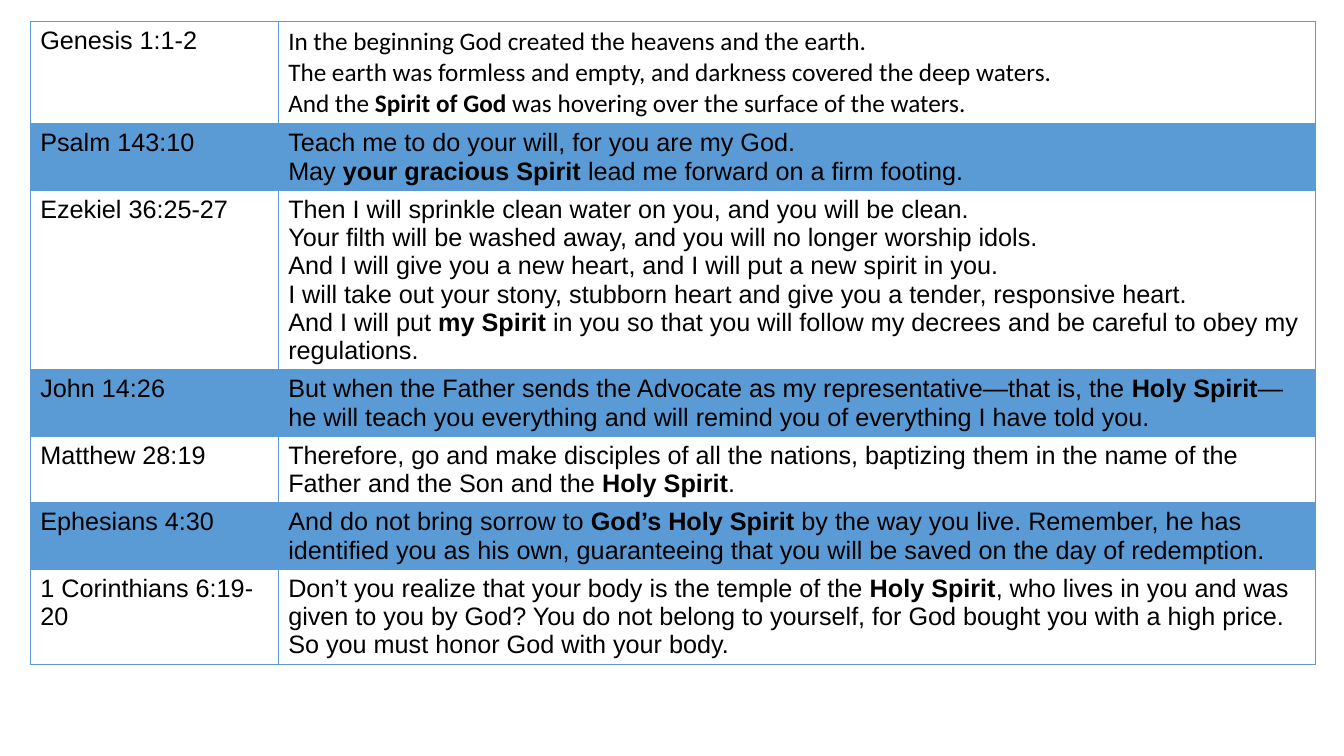
"""Build a slide with a table of Bible verses about the Holy Spirit."""
from lxml.etree import SubElement as add_element
from pptx import Presentation
from pptx.dml.color import RGBColor as Rgb
from pptx.oxml.ns import qn
from pptx.util import Inches, Pt

COLOURS = {"text": "000000", "accent": "5B9BD5"}
LINES_BY_VERSE = [3, 2, 6, 2, 2, 2, 3]
VERSES = [
    ("Genesis 1:1-2", [
        "In the beginning God created the heavens and the earth.",
        "The earth was formless and empty, and darkness covered the deep waters.",
        "And the **Spirit of God **was hovering over the surface of the waters.",
    ]),
    ("Psalm 143:10", [
        "Teach me to do your will, for you are my God.",
        "May **your gracious Spirit **lead me forward on a firm footing.",
    ]),
    ("Ezekiel 36:25-27", [
        "Then I will sprinkle clean water on you, and you will be clean.",
        "Your filth will be washed away, and you will no longer worship idols.",
        "And I will give you a new heart, and I will put a new spirit in you.",
        "I will take out your stony, stubborn heart and give you a tender, responsive heart.",
        "And I will put **my Spirit **in you so that you will follow my decrees "
        "and be careful to obey my regulations.",
    ]),
    ("John 14:26", [
        "But when the Father sends the Advocate as my representative—that is, the "
        "**Holy Spirit**—he will teach you everything and will remind you of "
        "everything I have told you.",
    ]),
    ("Matthew 28:19", [
        "Therefore, go and make disciples of all the nations, baptizing them in "
        "the name of the Father and the Son and the **Holy Spirit**.",
    ]),
    ("Ephesians 4:30", [
        "And do not bring sorrow to **God’s Holy Spirit **by the way you live. "
        "Remember, he has identified you as his own, guaranteeing that you will "
        "be saved on the day of redemption.",
    ]),
    ("1 Corinthians 6:19-20", [
        "Don’t you realize that your body is the temple of the **Holy Spirit**, "
        "who lives in you and was given to you by God? You do not belong to "
        "yourself, for God bought you with a high price. So you must honor God "
        "with your body.",
    ]),
]


def write(frame, lines, *, font="Arial", size=18, colour="text"):
    """Write one paragraph per line, with bold between double asterisks."""
    for number, line in enumerate(lines):
        paragraph = frame.add_paragraph() if number else frame.paragraphs[0]
        for position, words in enumerate(line.split("**")):
            run = paragraph.add_run()
            run.text = words
            run.font.name = font
            run.font.size = Pt(size)
            run.font.bold = position % 2 == 1
            run.font.color.rgb = Rgb.from_string(COLOURS[colour])


class VerseSlide:
    """Hold the slide and its style; lengths are percentages of its size."""

    def __init__(self, deck):
        self.deck = deck
        self.slide = deck.slides.add_slide(deck.slide_layouts[6])

    def across(self, share):
        """Turn a percentage of the width into a length."""
        return int(self.deck.slide_width * share / 100)

    def down(self, share):
        """Turn a percentage of the height into a length."""
        return int(self.deck.slide_height * share / 100)

    def borders(self, cell, **widths):
        """Draw the cell borders with widths in points."""
        properties = cell._tc.get_or_add_tcPr()
        for side in "LRTB":
            border = add_element(properties, qn(f"a:ln{side}"), w=str(Pt(widths.get(side, 1))))
            fill = add_element(border, qn("a:solidFill"))
            add_element(fill, qn("a:srgbClr"), val=COLOURS["accent"])

    def shade(self, cell, opacity):
        """Fill the cell with a translucent accent, or leave it clear."""
        if not opacity:
            cell.fill.background()
            return
        cell.fill.solid()
        cell.fill.fore_color.rgb = Rgb.from_string(COLOURS["accent"])
        tint = cell._tc.tcPr.find(".//" + qn("a:srgbClr"))
        add_element(tint, qn("a:alpha"), val=str(opacity * 1000))

    def table(self, left, top, columns, heights, verses):
        """Add the table of references and verses."""
        grid = self.slide.shapes.add_table(
            len(verses), len(columns), self.across(left), self.down(top),
            self.across(sum(columns)), self.down(sum(heights))).table
        grid.first_row = grid.horz_banding = False
        for column, share in zip(grid.columns, columns):
            column.width = self.across(share)
        for index, (reference, passage) in enumerate(verses):
            grid.rows[index].height = self.down(heights[index])
            for column, lines in enumerate(([reference], passage)):
                cell = grid.cell(index, column)
                opening = index == 0
                self.borders(cell, B=2 if opening else 1, T=2 if index == 1 else 1)
                self.shade(cell, 20 if index % 2 else 0)
                write(cell.text_frame, lines,
                      font="Calibri" if opening and column else "Arial")


def main():
    """Build and save the slide."""
    deck = Presentation()
    deck.slide_width, deck.slide_height = Inches(13.33), Inches(7.5)
    heights = [1.33 + lines * (3.73 if index else 4.07)
               for index, lines in enumerate(LINES_BY_VERSE)]
    VerseSlide(deck).table(2.25, 2.85, [18.45, 77.19], heights, VERSES)
    deck.save("out.pptx")


if __name__ == "__main__":
    main()
